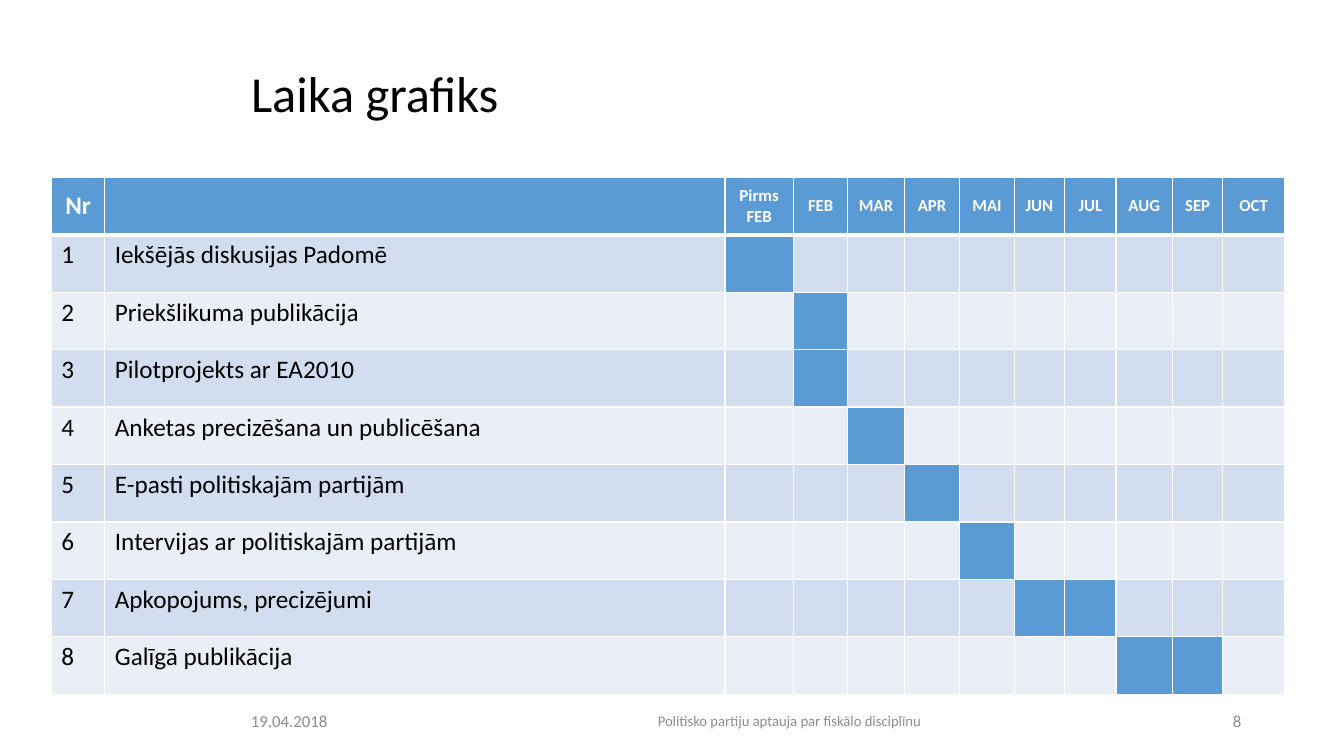
"""Builds the project schedule slide."""
from pptx import Presentation
from pptx import util as u
from pptx.dml import color
from pptx.enum import text
from pptx.oxml import ns, parse_xml

SCALE = 9144
BLUE, WHITE, BLACK, GREY = "5B9BD5", "FFFFFF", "000000", "8C8C8C"
BANDS = ("D2DEEF", "EAEFF7")
LEFT, CENTER, RIGHT = text.PP_ALIGN.LEFT, text.PP_ALIGN.CENTER, text.PP_ALIGN.RIGHT
MIDDLE = text.MSO_ANCHOR.MIDDLE
COLUMNS = (53, 615, 68, 54, 56, 55, 54, 50, 51, 56, 50, 61)
HEADINGS = ("Nr", "", "Pirms FEB", "FEB", "MAR", "APR", "MAI", "JUN", "JUL", "AUG", "SEP", "OCT")
TASKS = (
    ("Iekšējās diskusijas Padomē", ("Pirms FEB",)),
    ("Priekšlikuma publikācija", ("FEB",)),
    ("Pilotprojekts ar EA2010", ("FEB",)),
    ("Anketas precizēšana un publicēšana", ("MAR",)),
    ("E-pasti politiskajām partijām", ("APR",)),
    ("Intervijas ar politiskajām partijām", ("MAI",)),
    ("Apkopojums, precizējumi", ("JUN", "JUL")),
    ("Galīgā publikācija", ("AUG", "SEP")),
)


def px(*lengths):
    """Turn pixel lengths into EMU."""
    return [u.Emu(length * SCALE) for length in lengths]


def rgb(value):
    """Turn a hex string into a colour."""
    return color.RGBColor.from_string(value)


def write(frame, words, size, ink, align=LEFT, bold=False):
    """Put one formatted paragraph into a text frame."""
    paragraph = frame.paragraphs[0]
    paragraph.text = words
    paragraph.alignment = align
    for name, value in {"name": "Calibri", "size": u.Pt(size), "bold": bold}.items():
        setattr(paragraph.font, name, value)
    paragraph.font.color.rgb = rgb(ink)
    return paragraph


def style_cell(cell, fill, top=1, bottom=1):
    """Fill a cell and give it white borders of the given point widths."""
    cell.fill.solid()
    cell.fill.fore_color.rgb = rgb(fill)
    widths = {"lnL": 1, "lnR": 1, "lnT": top, "lnB": bottom}
    for index, (side, width) in enumerate(widths.items()):
        border = parse_xml(
            f'<a:{side} {ns.nsdecls("a")} w="{u.Pt(width)}"><a:solidFill>'
            f'<a:srgbClr val="{WHITE}"/></a:solidFill></a:{side}>')
        cell._tc.get_or_add_tcPr().insert(index, border)


def add_title(slide, box):
    """Place the slide title in its box."""
    title = slide.shapes.title
    for name, value in zip(("left", "top", "width", "height"), px(*box)):
        setattr(title, name, value)
    title.text_frame.vertical_anchor = MIDDLE
    write(title.text_frame, "Laika grafiks", 36, BLACK).line_spacing = 0.9


def add_schedule(slide, box):
    """Place the schedule table, with a blue cell for each active month."""
    table = slide.shapes.add_table(len(TASKS) + 1, len(COLUMNS), *px(*box)).table
    for column, width in zip(table.columns, px(*COLUMNS)):
        column.width = width
    for row in table.rows:
        row.height = px(box[3] // len(table.rows))[0]
    for index, heading in enumerate(HEADINGS):
        cell = table.cell(0, index)
        style_cell(cell, BLUE, bottom=3)
        cell.vertical_anchor = MIDDLE
        write(cell.text_frame, heading, 12 if index else 18, WHITE, CENTER, True)
    for number, (task, months) in enumerate(TASKS, 1):
        for index, heading in enumerate(HEADINGS):
            cell = table.cell(number, index)
            fill = BLUE if heading in months else BANDS[(number - 1) % 2]
            style_cell(cell, fill, top=3 if number == 1 else 1)
            if index < 2:
                write(cell.text_frame, (str(number), task)[index], 18, BLACK)


def add_footer(slide, box):
    """Place the date, footer text and slide number along one line."""
    left, top, width, height = box
    parts = (
        ("19.04.2018", 0, 164, 12, LEFT),
        ("Politisko partiju aptauja par fiskālo disciplīnu", 192, 704, 10.5, CENTER),
        ("8", width - 79, 79, 12, RIGHT),
    )
    for words, offset, part_width, size, align in parts:
        shape = slide.shapes.add_textbox(*px(left + offset, top, part_width, height))
        shape.text_frame.word_wrap = True
        shape.text_frame.vertical_anchor = MIDDLE
        write(shape.text_frame, words, size, GREY, align)


def main():
    """Build and save the presentation."""
    presentation = Presentation()
    presentation.slide_width, presentation.slide_height = px(1333, 750)
    slide = presentation.slides.add_slide(presentation.slide_layouts[5])
    add_title(slide, (239, 40, 1002, 111))
    add_schedule(slide, (51, 176, sum(COLUMNS), 513))
    add_footer(slide, (239, 695, 1002, 40))
    presentation.save("out.pptx")


if __name__ == "__main__":
    main()
